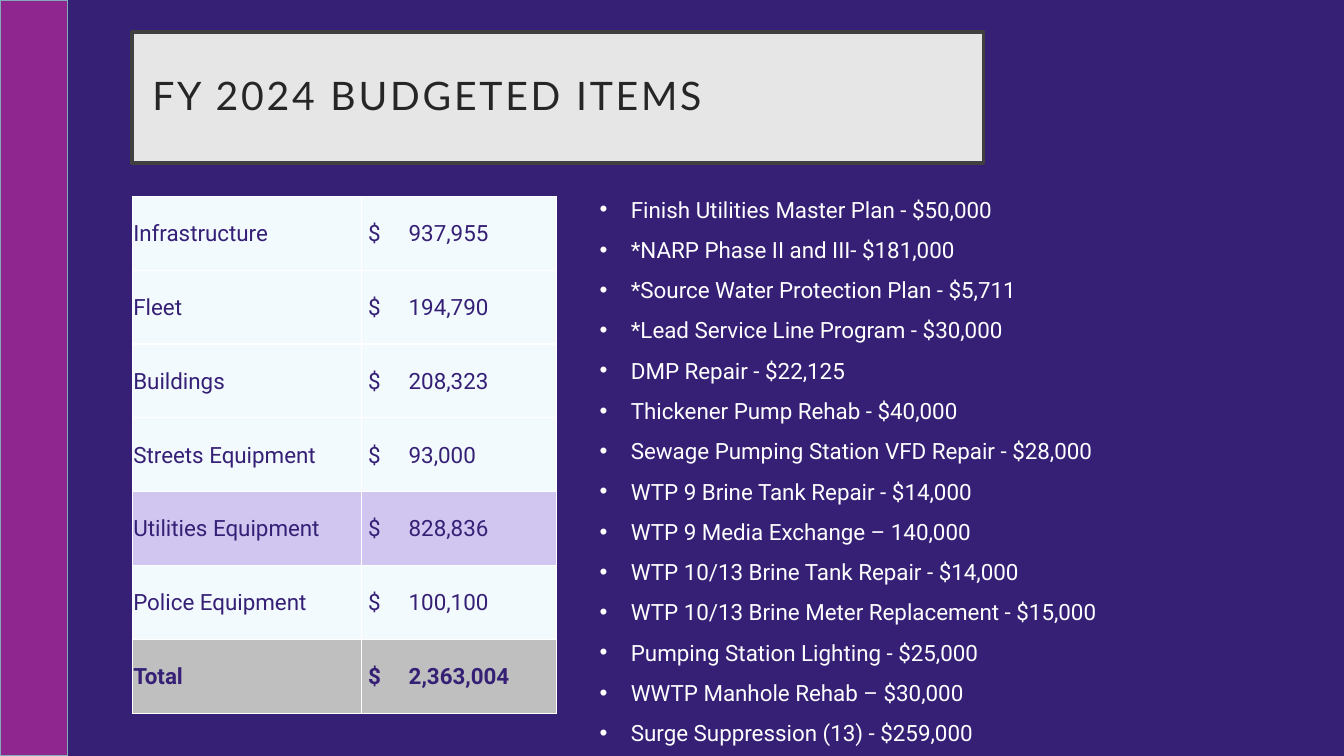
from lxml import etree
from pptx import Presentation
from pptx import util as u
from pptx.dml.color import RGBColor
from pptx.enum import shapes, text
from pptx.oxml.ns import qn

HUES = {
    "back": "352076", "bar": "8F268F", "edge": "84A9B9",
    "panel": "E7E6E6", "frame": "404040", "title": "262626",
    "pale": "F2FAFE", "lilac": "D0C6F0", "gray": "BFBFBF", "white": "FFFFFF",
}

BUDGET = [
    ("Infrastructure", "937,955", "pale"),
    ("Fleet", "194,790", "pale"),
    ("Buildings", "208,323", "pale"),
    ("Streets Equipment", "93,000", "pale"),
    ("Utilities Equipment", "828,836", "lilac"),
    ("Police Equipment", "100,100", "pale"),
    ("Total", "2,363,004", "gray"),
]

ITEMS = [
    "Finish Utilities Master Plan - $50,000",
    "*NARP Phase II and III- $181,000",
    "*Source Water Protection Plan - $5,711",
    "*Lead Service Line Program - $30,000",
    "DMP Repair - $22,125",
    "Thickener Pump Rehab - $40,000",
    "Sewage Pumping Station VFD Repair - $28,000",
    "WTP 9 Brine Tank Repair - $14,000",
    "WTP 9 Media Exchange – 140,000",
    "WTP 10/13 Brine Tank Repair - $14,000",
    "WTP 10/13 Brine Meter Replacement - $15,000",
    "Pumping Station Lighting - $25,000",
    "WWTP Manhole Rehab – $30,000",
    "Surge Suppression (13) - $259,000",
]


def hue(name):
    return RGBColor.from_string(HUES[name])


def style(para, face, size, color, bold=False):
    font = para.font
    font.name, font.size, font.bold = face, u.Pt(size), bold
    font.color.rgb = hue(color)


def add_rect(slide, area, fill, line, width):
    rect = slide.shapes.add_shape(
        shapes.MSO_SHAPE.RECTANGLE, *map(u.Cm, area))
    rect.shadow.inherit = False
    rect.fill.solid()
    rect.fill.fore_color.rgb = hue(fill)
    rect.line.color.rgb = hue(line)
    rect.line.width = u.Pt(width)
    return rect


def add_title(slide, words):
    frame = add_rect(slide, (3.33, 0.81, 21.46, 3.3),
                     "panel", "frame", 2.5).text_frame
    frame.margin_left = frame.margin_right = u.Cm(0.51)
    frame.margin_top = frame.margin_bottom = u.Cm(0.51)
    frame.vertical_anchor = text.MSO_ANCHOR.MIDDLE
    para = frame.paragraphs[0]
    para.alignment = text.PP_ALIGN.LEFT
    para.line_spacing = 0.9
    run = para.add_run()
    run.text = words
    run._r.get_or_add_rPr().set("spc", "200")
    style(para, "Lato", 28, "title")


def add_borders(cell):
    props = cell._tc.get_or_add_tcPr()
    for side in ("lnL", "lnR", "lnT", "lnB"):
        line = etree.SubElement(props, qn("a:" + side), w=str(u.Pt(1)))
        fill = etree.SubElement(line, qn("a:solidFill"))
        etree.SubElement(fill, qn("a:srgbClr"), val=HUES["white"])


def fill_cell(cell, words, fill, inset, bold):
    add_borders(cell)
    cell.fill.solid()
    cell.fill.fore_color.rgb = hue(fill)
    cell.vertical_anchor = text.MSO_ANCHOR.MIDDLE
    cell.margin_left = u.Cm(inset)
    cell.margin_right = cell.margin_top = u.Cm(0.03)
    cell.margin_bottom = 0
    cell.text = words
    para = cell.text_frame.paragraphs[0]
    if "\t" in words:
        tabs = etree.SubElement(para._p.get_or_add_pPr(), qn("a:tabLst"))
        etree.SubElement(tabs, qn("a:tab"), pos=str(u.Cm(1.02)), algn="l")
    style(para, "Roboto", 16, "back", bold)


def add_budget(slide):
    area = map(u.Cm, (3.33, 4.95, 10.7, 13.02))
    table = slide.shapes.add_table(len(BUDGET), 2, *area).table
    table.first_row = table.horz_banding = False
    for col, width in zip(table.columns, (5.78, 4.92)):
        col.width = u.Cm(width)
    for row, (label, amount, fill) in enumerate(BUDGET):
        table.rows[row].height = u.Cm(1.86)
        bold = label == "Total"
        fill_cell(table.cell(row, 0), label, fill, 0.03, bold)
        fill_cell(table.cell(row, 1), "$\t" + amount, fill, 0.17, bold)


def add_list(slide, items):
    area = map(u.Cm, (14.86, 4.47, 15.67, 14.5))
    frame = slide.shapes.add_textbox(*area).text_frame
    frame.word_wrap = True
    frame.auto_size = text.MSO_AUTO_SIZE.SHAPE_TO_FIT_TEXT
    for index, item in enumerate(items):
        para = frame.add_paragraph() if index else frame.paragraphs[0]
        para.text = item
        para.line_spacing = 1.5
        props = para._p.get_or_add_pPr()
        props.set("marL", str(u.Cm(0.79)))
        props.set("indent", str(-u.Cm(0.79)))
        etree.SubElement(props, qn("a:buFont"), typeface="Arial")
        etree.SubElement(props, qn("a:buChar"), char="•")
        style(para, "Roboto", 16, "white")


def main():
    deck = Presentation()
    deck.slide_width, deck.slide_height = u.Cm(33.87), u.Cm(19.05)
    slide = deck.slides.add_slide(deck.slide_layouts[6])
    slide.background.fill.solid()
    slide.background.fill.fore_color.rgb = hue("back")

    # Side bar and heading
    add_rect(slide, (0, 0, 1.71, 19.05), "bar", "edge", 1)
    add_title(slide, "FY 2024 BUDGETED ITEMS")

    # Budget by department and utility projects
    add_budget(slide)
    add_list(slide, ITEMS)
    deck.save("out.pptx")


if __name__ == "__main__":
    main()
